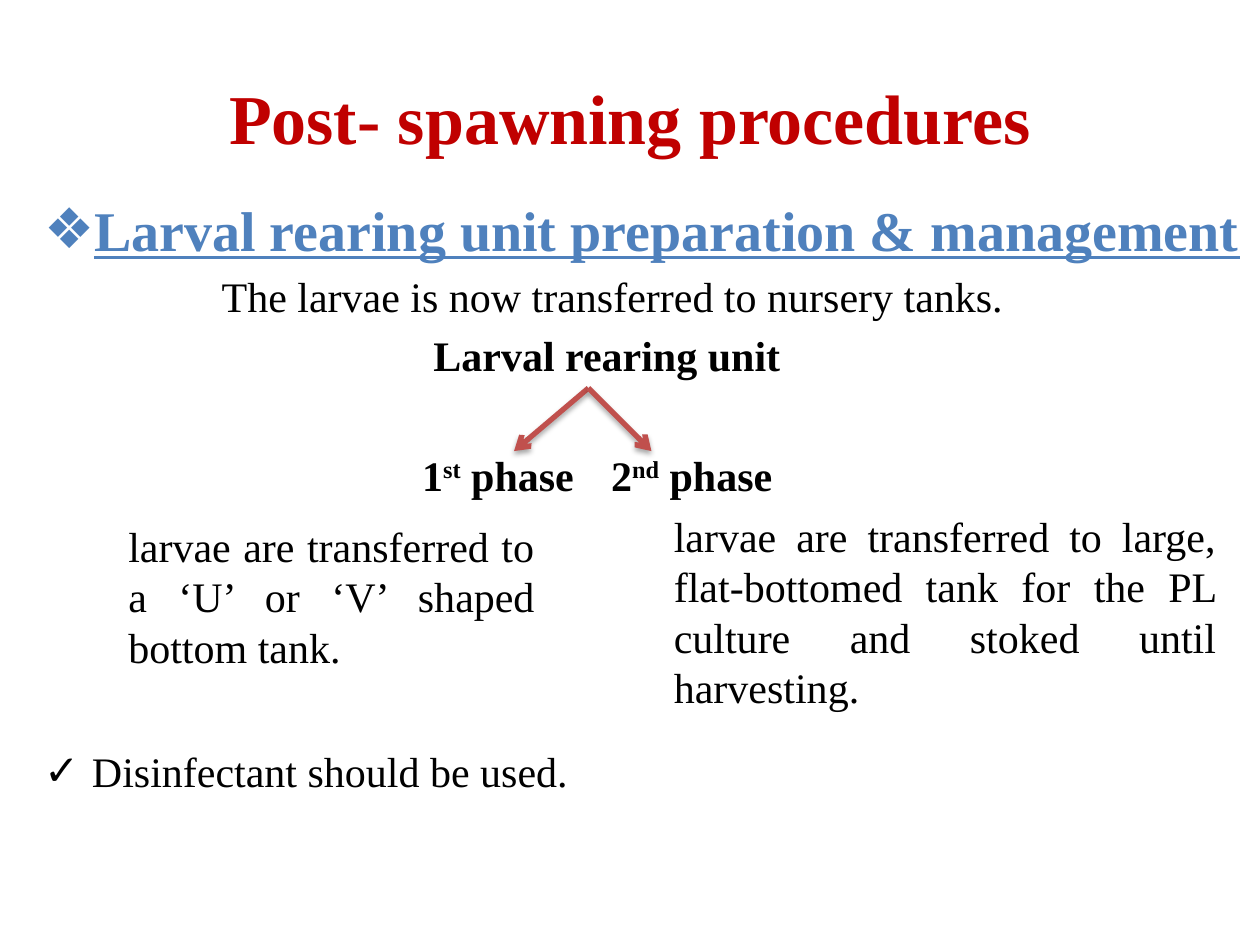
import pptx
import pptx.util
import pptx.dml.color
import pptx.enum.shapes
import pptx.enum.text
import pptx.oxml
import pptx.oxml.ns

Inches = pptx.util.Inches
Pt = pptx.util.Pt
ALIGN = pptx.enum.text.PP_ALIGN
FONT = "Times New Roman"
RED, BLUE, BLACK, ARROW = "C00000", "4F81BD", "000000", "C0504D"


def colour(value):
    return pptx.dml.color.RGBColor.from_string(value)


def add_xml(parent, markup):
    namespace = pptx.oxml.ns.nsdecls("a")
    tag, rest = markup[:-1].split(" ", 1) if " " in markup.split(">")[0] else (None, None)
    if tag:
        element = pptx.oxml.parse_xml(f"{tag} {namespace} {rest}>")
    else:
        element = pptx.oxml.parse_xml(markup.replace(">", f" {namespace}>", 1))
    parent.append(element)


def place(shape, box):
    shape.left, shape.top, shape.width, shape.height = map(Inches, box)


def format_span(span, size=24, value=BLACK, bold=False, underline=False):
    font = span.font
    font.name, font.size = FONT, Pt(size)
    font.bold, font.underline = bold, underline
    font.color.rgb = colour(value)


def set_indent(para, margin, first, bullet=None, tab=None):
    """Set the left margin, first-line indent, bullet and tab stop in inches."""
    properties = para._p.get_or_add_pPr()
    properties.set("marL", str(Inches(margin)))
    properties.set("indent", str(Inches(first)))
    add_xml(properties, f'<a:buChar char="{bullet}"/>' if bullet else '<a:buNone />')
    if tab:
        add_xml(properties, f'<a:tabLst><a:tab pos="{Inches(tab)}" algn="l"/></a:tabLst>')


def add_title(page, box):
    title = page.shapes.title
    place(title, box)
    title.text_frame.text = "Post- spawning procedures"
    para = title.text_frame.paragraphs[0]
    para.alignment = ALIGN.CENTER
    format_span(para.runs[0], 40, RED, bold=True)


def add_body(page, box):
    body = page.placeholders[1]
    place(body, box)
    frame = body.text_frame
    frame.auto_size = pptx.enum.text.MSO_AUTO_SIZE.NONE

    # Heading, intro, unit name, phase labels and closing point
    lines = [
        (["Larval rearing unit preparation & management"], 0.38, -0.38, "❖", None, None,
         dict(size=32, value=BLUE, bold=True, underline=True)),
        (["The larvae is now transferred to nursery tanks."], 0, 1.41, None, None, None, {}),
        (["Larval rearing unit"], 0, 3.09, None, None, None, dict(bold=True)),
        (["1", "st", " phase\t2", "nd", " phase"], 0, 3, None, 4.71, 39.6, dict(bold=True)),
        (["Disinfectant should be used."], 0.38, -0.38, "✓", None, 140.4, {}),
    ]
    for index, (texts, margin, first, bullet, tab, gap, style) in enumerate(lines):
        para = frame.paragraphs[0] if index == 0 else frame.add_paragraph()
        if gap:
            para.space_before = Pt(gap)
        set_indent(para, margin, first, bullet, tab)
        for text in texts:
            span = para.add_run()
            span.text = text
            format_span(span, **style)
            if text in ("st", "nd"):
                span._r.get_or_add_rPr().set("baseline", "30000")


def add_branches(page, box):
    """Draw two arrows from the top of the box to its lower corners."""
    left, top, width, height = box
    apex = left + 0.59
    for end in (left, left + width):
        arrow = page.shapes.add_connector(
            pptx.enum.shapes.MSO_CONNECTOR.STRAIGHT,
            Inches(apex), Inches(top), Inches(end), Inches(top + height))
        arrow.line.color.rgb = colour(ARROW)
        arrow.line.width = Pt(3)
        add_xml(arrow.line._get_or_add_ln(), '<a:tailEnd type="arrow"/>')
        add_xml(arrow._element.spPr,
                f'<a:effectLst><a:outerShdw blurRad="{Pt(3.1)}" dist="{Pt(1.8)}" '
                'dir="5400000" rotWithShape="0"><a:srgbClr val="000000">'
                '<a:alpha val="35000"/></a:srgbClr></a:outerShdw></a:effectLst>')


def add_phase_note(page, box, text):
    note = page.shapes.add_textbox(*map(Inches, box))
    frame = note.text_frame
    frame.word_wrap = True
    frame.text = text
    para = frame.paragraphs[0]
    para.alignment = ALIGN.JUSTIFY
    format_span(para.runs[0])


def main():
    deck = pptx.Presentation()
    deck.slide_width, deck.slide_height = Inches(10), Inches(7.5)
    page = deck.slides.add_slide(deck.slide_layouts[1])
    add_title(page, (0.5, 0.3, 9, 1.25))
    add_body(page, (0.25, 1.5, 9.75, 5.75))
    add_branches(page, (4.08, 3.08, 1.09, 0.5))
    add_phase_note(page, (0.92, 4.08, 3.42, 1.31),
                   "larvae are transferred to a ‘U’ or ‘V’ shaped bottom tank.")
    add_phase_note(page, (5.25, 4, 4.5, 1.72),
                   "larvae are transferred to large, flat-bottomed tank for the PL "
                   "culture and stoked until harvesting.")
    deck.save("out.pptx")


if __name__ == "__main__":
    main()
